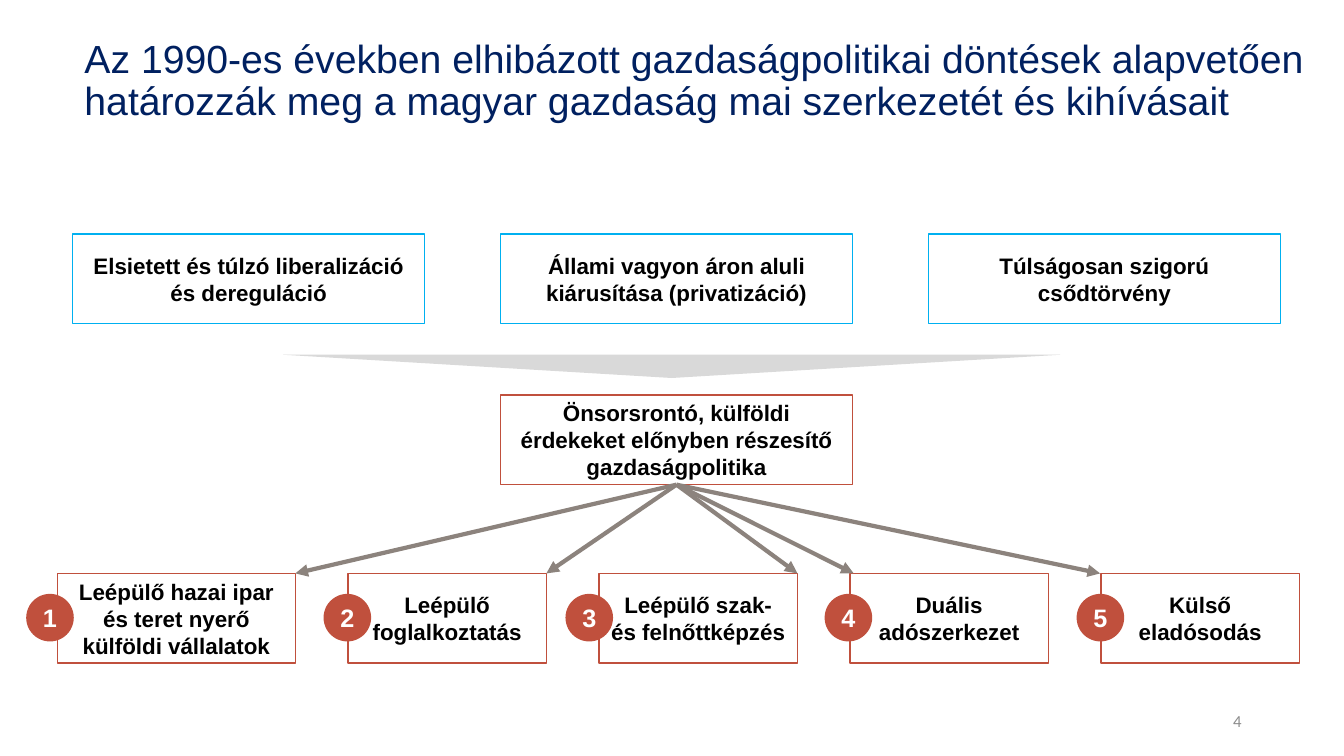
from dataclasses import dataclass

import pptx
import pptx.dml.color
import pptx.enum.shapes
import pptx.enum.text
import pptx.oxml
import pptx.oxml.ns
import pptx.util

Pt = pptx.util.Pt
Shapes = pptx.enum.shapes.MSO_SHAPE
Align = pptx.enum.text.PP_ALIGN
Anchor = pptx.enum.text.MSO_ANCHOR


@dataclass(frozen=True)
class Theme:
    """Colours, fonts and type sizes of the slide."""
    navy: str = "002060"
    blue: str = "00B0F0"
    red: str = "C0503D"
    arrow: str = "8C837D"
    wedge: str = "D9D9D9"
    black: str = "000000"
    white: str = "FFFFFF"
    muted: str = "8C8C8C"
    font: str = "Arial"
    number_font: str = "Calibri"
    title_size: int = 28
    badge_size: int = 18
    box_size: int = 16
    number_size: int = 12


THEME = Theme()
BOX_HEIGHT = 64
CAUSE_LEFT, CAUSE_TOP, CAUSE_WIDTH, CAUSE_PITCH = 52, 167.3, 251.3, 305.6
POLICY_TOP = 282.2
OUTCOME_TOP, OUTCOME_RIGHT, OUTCOME_PITCH = 409.6, 211, 179.3
BADGE_TOP, BADGE_SIZE = 424.2, 34

CAUSES = [
    "Elsietett és túlzó liberalizáció és dereguláció",
    "Állami vagyon áron aluli kiárusítása (privatizáció)",
    "Túlságosan szigorú csődtörvény",
]
POLICY = "Önsorsrontó, külföldi érdekeket előnyben részesítő gazdaságpolitika"
# text, box width, badge left, arrow tip
OUTCOMES = [
    ("Leépülő hazai ipar és teret nyerő külföldi vállalatok", 170, 18.7, 211),
    ("Leépülő foglalkoztatás", 141.8, 231.1, 390.3),
    ("Leépülő szak- és felnőttképzés", 141.8, 403.9, 569.6),
    ("Duális adószerkezet", 141.8, 589, 609.8),
    ("Külső eladósodás", 141.8, 769, 785.8),
]


def rgb(colour):
    """Turn a hex string into a colour value."""
    return pptx.dml.color.RGBColor.from_string(colour)


def write(shape, text, size, colour, align, bold=False, font=THEME.font):
    """Write one paragraph into a shape and return it."""
    shape.text_frame.word_wrap = True
    paragraph = shape.text_frame.paragraphs[0]
    paragraph.alignment = align
    run = paragraph.add_run()
    run.text = text
    run.font.name = font
    run.font.size = Pt(size)
    run.font.bold = bold
    run.font.color.rgb = rgb(colour)
    return paragraph


def add_figure(slide, kind, bounds, fill=None, line=None):
    """Add a flat preset shape with an optional fill and outline."""
    shape = slide.shapes.add_shape(kind, *map(Pt, bounds))
    shape.shadow.inherit = False
    if fill:
        shape.fill.solid()
        shape.fill.fore_color.rgb = rgb(fill)
    else:
        shape.fill.background()
    if line:
        shape.line.color.rgb = rgb(line)
        shape.line.width = Pt(1)
    else:
        shape.line.fill.background()
    return shape


def add_box(slide, text, left, top, width, line):
    """Add an outlined box with bold centred text."""
    box = add_figure(slide, Shapes.RECTANGLE, (left, top, width, BOX_HEIGHT), line=line)
    box.text_frame.vertical_anchor = Anchor.MIDDLE
    write(box, text, THEME.box_size, THEME.black, Align.CENTER, bold=True)
    return box


def add_badge(slide, number, left):
    """Add a numbered red circle."""
    badge = add_figure(slide, Shapes.OVAL, (left, BADGE_TOP, BADGE_SIZE, BADGE_SIZE), fill=THEME.red)
    frame = badge.text_frame
    frame.margin_left = frame.margin_right = frame.margin_top = frame.margin_bottom = 0
    frame.vertical_anchor = Anchor.MIDDLE
    write(badge, str(number), THEME.badge_size, THEME.white, Align.CENTER, bold=True)


def add_arrow(slide, source, tip):
    """Add an arrow from the bottom of a box to a point on the outcome row."""
    connector = slide.shapes.add_connector(
        pptx.enum.shapes.MSO_CONNECTOR.STRAIGHT,
        source.left, source.top, Pt(tip), Pt(OUTCOME_TOP))
    connector.begin_connect(source, 2)
    connector.line.color.rgb = rgb(THEME.arrow)
    connector.line.width = Pt(3)
    head = pptx.oxml.parse_xml(
        f'<a:tailEnd {pptx.oxml.ns.nsdecls("a")} type="triangle"/>')
    connector.line._get_or_add_ln().append(head)
    effects = pptx.oxml.parse_xml(f'<a:effectLst {pptx.oxml.ns.nsdecls("a")}/>')
    connector._element.spPr.append(effects)


def add_title(slide, text):
    """Add the slide heading."""
    title = slide.shapes.add_textbox(*map(Pt, (53.3, 24.5, 892.8, 72.7)))
    paragraph = write(title, text, THEME.title_size, THEME.navy, Align.LEFT)
    paragraph.line_spacing = 0.9


def add_page_number(slide, number):
    """Add the page number at the lower right."""
    box = slide.shapes.add_textbox(*map(Pt, (678, 500.5, 216, 28.8)))
    box.text_frame.vertical_anchor = Anchor.MIDDLE
    write(box, str(number), THEME.number_size, THEME.muted, Align.RIGHT, font=THEME.number_font)


def main():
    """Build the slide and save it."""
    presentation = pptx.Presentation()
    presentation.slide_width, presentation.slide_height = Pt(960), Pt(540)
    slide = presentation.slides.add_slide(presentation.slide_layouts[6])

    add_page_number(slide, 4)
    add_title(slide, "Az 1990-es években elhibázott gazdaságpolitikai döntések alapvetően "
                     "határozzák meg a magyar gazdaság mai szerkezetét és kihívásait")
    for index, cause in enumerate(CAUSES):
        add_box(slide, cause, CAUSE_LEFT + index * CAUSE_PITCH, CAUSE_TOP, CAUSE_WIDTH, THEME.blue)
    wedge = add_figure(slide, Shapes.ISOSCELES_TRIANGLE, (202.3, 253.4, 555, 16.6), fill=THEME.wedge)
    wedge.rotation = 180
    policy = add_box(slide, POLICY, CAUSE_LEFT + CAUSE_PITCH, POLICY_TOP, CAUSE_WIDTH, THEME.red)

    for index, (text, width, _, _) in enumerate(OUTCOMES):
        right = OUTCOME_RIGHT + index * OUTCOME_PITCH
        add_box(slide, text, right - width, OUTCOME_TOP, width, THEME.red)
    for _, _, _, tip in OUTCOMES:
        add_arrow(slide, policy, tip)
    for number, (_, _, badge_left, _) in enumerate(OUTCOMES, start=1):
        add_badge(slide, number, badge_left)

    presentation.save("out.pptx")


if __name__ == "__main__":
    main()
